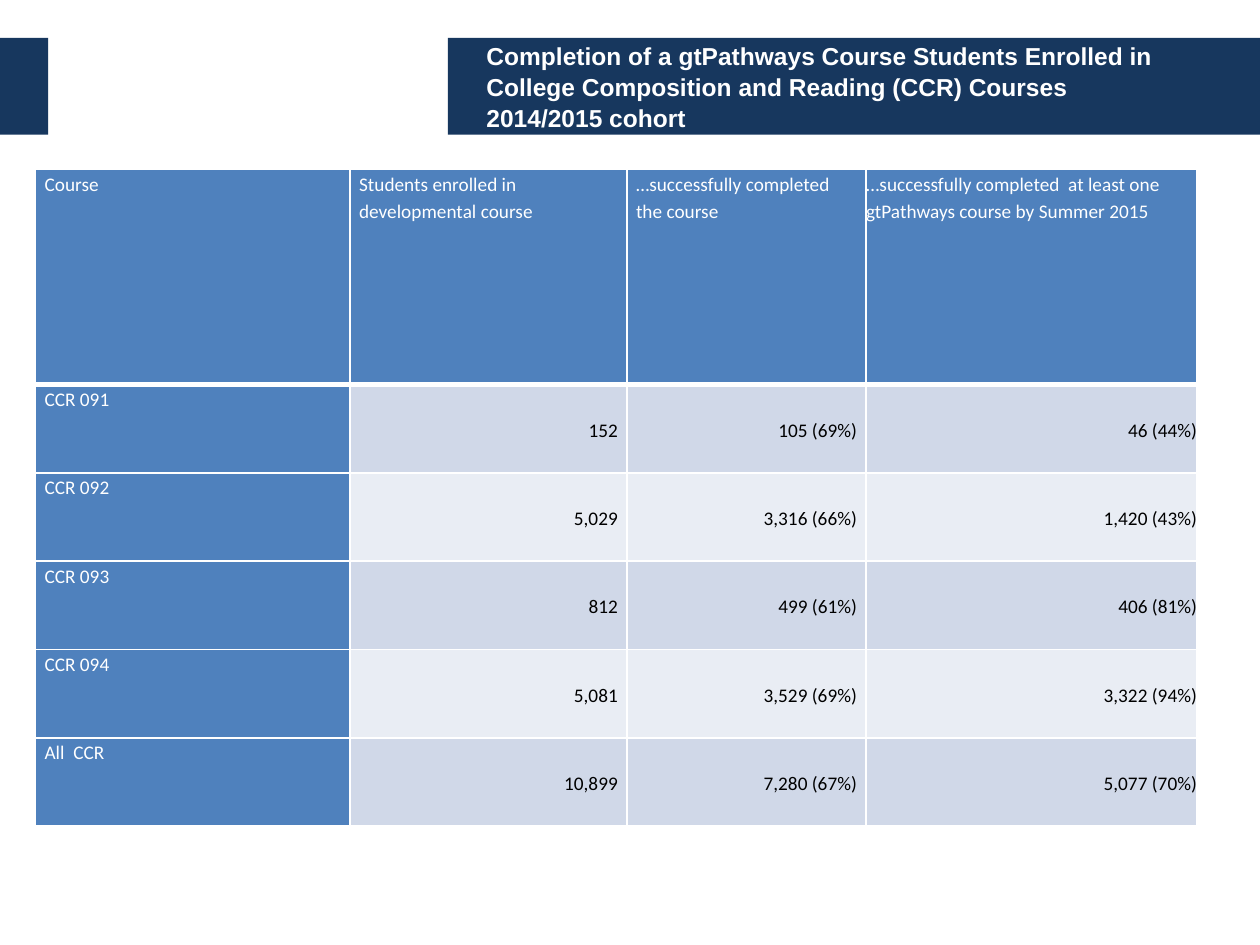
from lxml import etree
from pptx import Presentation
from pptx import util as u
from pptx.dml.color import RGBColor
from pptx.enum import shapes, text
from pptx.oxml.ns import qn

Pt = u.Pt
NAVY = RGBColor(0x17, 0x37, 0x5E)
BLUE = RGBColor(0x4F, 0x81, 0xBD)
BAND_DARK = RGBColor(0xD0, 0xD8, 0xE8)
BAND_LIGHT = RGBColor(0xE9, 0xED, 0xF4)
WHITE = RGBColor(0xFF, 0xFF, 0xFF)
BLACK = RGBColor(0, 0, 0)

TITLE = ("Completion of a gtPathways Course Students Enrolled in College "
         "Composition and Reading (CCR) Courses\v2014/2015 cohort")
ROWS = [
    ("Course", "Students enrolled in developmental course",
     "…successfully completed the course",
     "…successfully completed  at least one gtPathways course by Summer 2015"),
    ("CCR 091", "152", "105 (69%)", "46 (44%)"),
    ("CCR 092", "5,029", "3,316 (66%)", "1,420 (43%)"),
    ("CCR 093", "812", "499 (61%)", "406 (81%)"),
    ("CCR 094", "5,081", "3,529 (69%)", "3,322 (94%)"),
    ("All  CCR", "10,899", "7,280 (67%)", "5,077 (70%)"),
]
COL_WIDTHS = (179.7, 158.3, 136.7, 189.1)
HEADER_HEIGHT, ROW_HEIGHT = 122.9, 50.5


def write(tf, content, *, size, font, color, bold=False, align=None,
          spacing=1.0, after=0):
    p = tf.paragraphs[0]
    p.text = content
    p.alignment = align or text.PP_ALIGN.LEFT
    p.line_spacing = spacing
    p.space_after = Pt(after)
    for r in p.runs:
        r.font.size, r.font.name, r.font.bold = Pt(size), font, bold
        r.font.color.rgb = color


def add_bar(s, left, width):
    sp = s.shapes.add_shape(shapes.MSO_SHAPE.RECTANGLE,
                            Pt(left), Pt(21.6), Pt(width), Pt(55.4))
    sp.shadow.inherit = False
    sp.fill.solid()
    sp.fill.fore_color.rgb = NAVY
    sp.line.fill.background()


def add_title(s):
    sp = s.shapes.add_textbox(Pt(270.9), Pt(21.6), Pt(413.1), Pt(55.4))
    tf = sp.text_frame
    tf.word_wrap = True
    tf.vertical_anchor = text.MSO_ANCHOR.MIDDLE
    write(tf, TITLE, size=14, font="Arial", color=WHITE, bold=True,
          spacing=1.05)


def set_borders(cell, bottom):
    # Border lines come before the fill in the cell properties
    tc_pr = cell._tc.get_or_add_tcPr()
    widths = {"a:lnL": 1, "a:lnR": 1, "a:lnT": 1, "a:lnB": bottom}
    for i, (tag, width) in enumerate(widths.items()):
        ln = etree.Element(qn(tag), w=str(Pt(width)))
        fill = etree.SubElement(ln, qn("a:solidFill"))
        etree.SubElement(fill, qn("a:srgbClr"), val=str(WHITE))
        tc_pr.insert(i, ln)


def format_cell(cell, content, row, col):
    header, label, last = row == 0, col == 0, col == len(COL_WIDTHS) - 1
    heading = header or label
    cell.margin_left = cell.margin_right = Pt(0 if last else 5.2)
    cell.margin_top = cell.margin_bottom = 0
    cell.vertical_anchor = (text.MSO_ANCHOR.TOP if heading
                            else text.MSO_ANCHOR.MIDDLE)
    cell.fill.solid()
    cell.fill.fore_color.rgb = (BLUE if heading else
                                BAND_DARK if row % 2 else BAND_LIGHT)
    write(cell.text_frame, content, size=11, font="Calibri",
          color=WHITE if heading else BLACK,
          align=None if heading else text.PP_ALIGN.RIGHT,
          spacing=1.15, after=10 if header and not last else 0)
    set_borders(cell, 3 if header else 1)


def add_course_table(s):
    height = HEADER_HEIGHT + ROW_HEIGHT * (len(ROWS) - 1)
    table = s.shapes.add_table(len(ROWS), len(COL_WIDTHS), Pt(20.3), Pt(96.8),
                               Pt(sum(COL_WIDTHS)), Pt(height)).table
    for column, width in zip(table.columns, COL_WIDTHS):
        column.width = Pt(width)
    for i, values in enumerate(ROWS):
        table.rows[i].height = Pt(ROW_HEIGHT if i else HEADER_HEIGHT)
        for j, value in enumerate(values):
            format_cell(table.cell(i, j), value, i, j)


def main():
    prs = Presentation()
    prs.slide_width, prs.slide_height = Pt(720), Pt(540)
    s = prs.slides.add_slide(prs.slide_layouts[6])

    # Title band
    add_bar(s, 256, 464)
    add_bar(s, 0, 27.6)
    add_title(s)

    # Completion figures by course
    add_course_table(s)
    prs.save("out.pptx")


if __name__ == "__main__":
    main()
